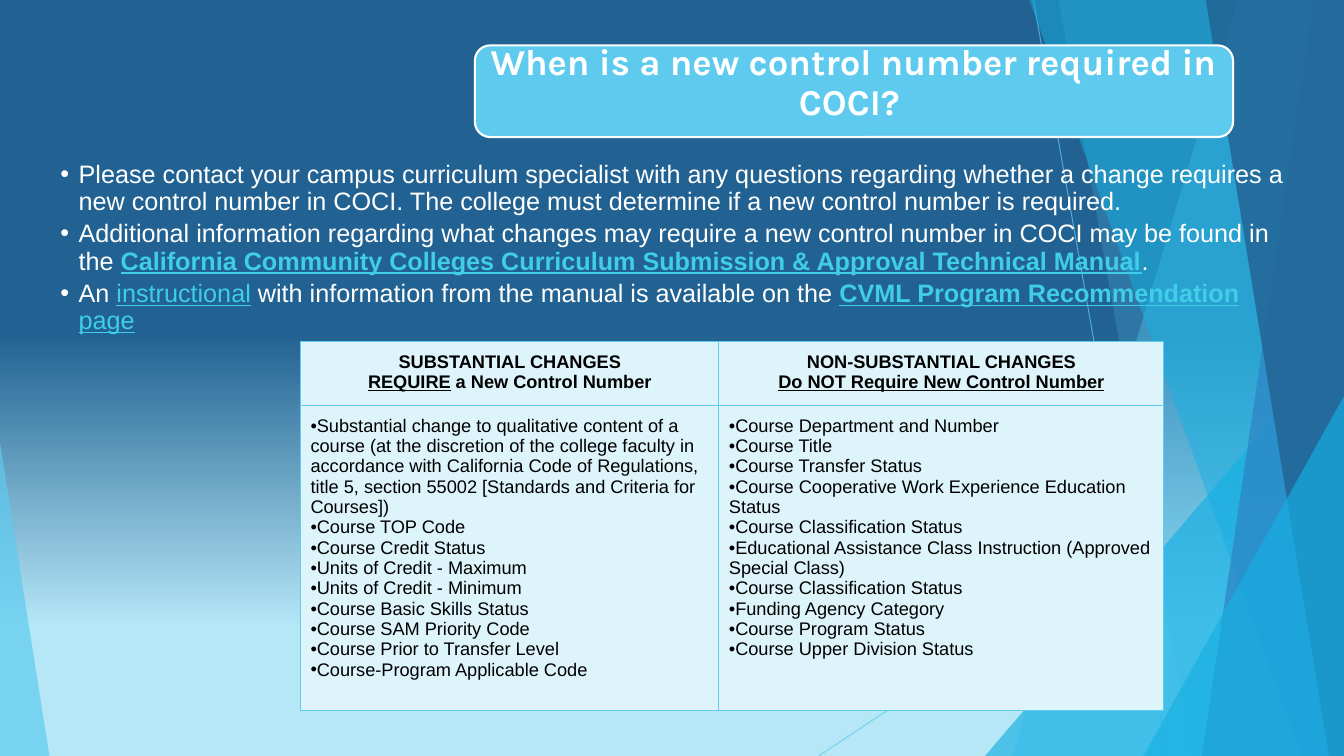
import pptx
import pptx.dml.color
import pptx.enum.shapes
import pptx.enum.text
import pptx.oxml
import pptx.oxml.ns
import pptx.util
from lxml import etree

Inches = pptx.util.Inches
Pt = pptx.util.Pt
qn = pptx.oxml.ns.qn
SHAPE = pptx.enum.shapes.MSO_SHAPE
ALIGN = pptx.enum.text.PP_ALIGN
ANCHOR = pptx.enum.text.MSO_ANCHOR

COLORS = {
    "navy": "226292", "pale": "B5E7F7", "sky": "5FCBEF", "azure": "16B0E3",
    "blue": "2E83C3", "title": "5ECBEE", "white": "FFFFFF", "black": "000000",
    "link": "3FCDE7", "cell": "DEF4FB",
}
LINK = {"color": "link", "underline": True}
BOLD_LINK = {**LINK, "bold": True}

NOTES = [
    [("Please contact your campus curriculum specialist with any questions regarding whether a change "
      "requires a new control number in COCI. The college must determine if a new control number is required.", {})],
    [("Additional information regarding what changes may require a new control number in COCI "
      "may be found in the ", {}),
     ("California Community Colleges Curriculum Submission & Approval Technical Manual", BOLD_LINK), (".", {})],
    [("An ", {}), ("instructional", LINK),
     (" with information from the manual is available on the ", {}),
     ("CVML Program Recommendation ", BOLD_LINK), ("page", LINK)],
]
HEADERS = [
    [[("SUBSTANTIAL CHANGES", {})],
     [("REQUIRE", {"underline": True}), (" a New Control Number", {})]],
    [[("NON-SUBSTANTIAL CHANGES", {})],
     [("Do NOT Require New Control Number", {"underline": True})]],
]
CHANGES = [
    ["Substantial change to qualitative content of a course (at the discretion of the college faculty in "
     "accordance with California Code of Regulations, title 5, section 55002 "
     "[Standards and Criteria for Courses])",
     "Course TOP Code", "Course Credit Status", "Units of Credit - Maximum", "Units of Credit - Minimum",
     "Course Basic Skills Status", "Course SAM Priority Code", "Course Prior to Transfer Level",
     "Course-Program Applicable Code"],
    ["Course Department and Number", "Course Title", "Course Transfer Status",
     "Course Cooperative Work Experience Education Status", "Course Classification Status",
     "Educational Assistance Class Instruction (Approved Special Class)", "Course Classification Status",
     "Funding Agency Category", "Course Program Status", "Course Upper Division Status"],
]


def rgb(name):
    return pptx.dml.color.RGBColor.from_string(COLORS[name])


def set_alpha(element, percent):
    for clr in element.iter(qn("a:srgbClr")):
        etree.SubElement(clr, qn("a:alpha"), val=str(percent * 1000))


def set_bullet(p, color, margin, indent):
    pPr = p._p.get_or_add_pPr()
    pPr.set("marL", str(Inches(margin)))
    pPr.set("indent", str(Inches(indent)))
    clr = etree.SubElement(pPr, qn("a:buClr"))
    etree.SubElement(clr, qn("a:srgbClr"), val=COLORS[color])
    etree.SubElement(pPr, qn("a:buFont"), typeface="Arial")
    etree.SubElement(pPr, qn("a:buChar"), char="•")


def write(tf, paragraphs, size, color, font="Arial", bold=False, align=ALIGN.LEFT,
          spacing=None, before=None, bullet=None):
    for i, pieces in enumerate(paragraphs):
        p = tf.add_paragraph() if i else tf.paragraphs[0]
        p.alignment = align
        p.line_spacing = spacing
        if before is not None:
            p.space_before = Pt(before)
        if bullet:
            set_bullet(p, color, *bullet)
        for text, fmt in pieces:
            r = p.add_run()
            r.text = text
            r.font.name = font
            r.font.size = Pt(size)
            r.font.bold = fmt.get("bold", bold)
            r.font.underline = fmt.get("underline", False)
            r.font.color.rgb = rgb(fmt.get("color", color))


def add_textbox(s, x, y, w, h, insets, anchor):
    tf = s.shapes.add_textbox(Inches(x), Inches(y), Inches(w), Inches(h)).text_frame
    tf.word_wrap = True
    tf.vertical_anchor = anchor
    tf.margin_left, tf.margin_top, tf.margin_right, tf.margin_bottom = map(Inches, insets)
    return tf


def paint(sp, color, alpha):
    sp.shadow.inherit = False
    sp.fill.solid()
    sp.fill.fore_color.rgb = rgb(color)
    sp.line.fill.background()
    set_alpha(sp._element.spPr, alpha)


def add_ray(s, x1, y1, x2, y2):
    line = s.shapes.add_connector(pptx.enum.shapes.MSO_CONNECTOR.STRAIGHT,
                                  Inches(x1), Inches(y1), Inches(x2), Inches(y2))
    line.line.color.rgb = rgb("sky")
    line.line.width = Pt(0.75)
    spPr = line._element.spPr
    set_alpha(spPr, 70)
    etree.SubElement(spPr, qn("a:effectLst"))


def add_band(s, right, bottom, top_x, bottom_x, color, alpha):
    points = [(right, 0), (right, bottom), (bottom_x, bottom)]
    builder = s.shapes.build_freeform(Inches(top_x), 0)
    builder.add_line_segments([(Inches(x), Inches(y)) for x, y in points], close=True)
    paint(builder.convert_to_shape(), color, alpha)


def add_triangle(s, left, top, right, bottom, apex, color, alpha):
    sp = s.shapes.add_shape(SHAPE.ISOSCELES_TRIANGLE, Inches(left), Inches(top),
                            Inches(right - left), Inches(bottom - top))
    sp.adjustments[0] = apex
    paint(sp, color, alpha)


def draw_backdrop(s, w, h):
    fill = s.background.fill
    fill.gradient()
    fill.gradient_angle = 270
    for stop, position, color in zip(fill.gradient_stops, (0.44, 0.83), ("navy", "pale")):
        stop.position = position
        stop.color.rgb = rgb(color)
    add_ray(s, 10.25, 0, 11.58, h)
    add_ray(s, w, 4.03, 8.12, h)
    add_band(s, w, h, 12.28, 10.04, "sky", 36)
    add_band(s, w, h, 10.5, 11.83, "sky", 20)
    add_triangle(s, 9.77, 3.33, w, h, 1, "azure", 66)
    add_band(s, w, h, 10.21, 12.91, "azure", 50)
    add_band(s, w, h, 13.03, 11.92, "blue", 70)
    add_band(s, w, h, 11.96, 13.18, "navy", 80)
    add_triangle(s, 11.34, 3.93, w, h, 1, "azure", 66)
    add_triangle(s, 0, 4.39, 0.49, h, 0, "sky", 70)


def draw_title(s, x, y, w, h):
    sp = s.shapes.add_shape(SHAPE.ROUNDED_RECTANGLE, Inches(x), Inches(y), Inches(w), Inches(h))
    sp.shadow.inherit = False
    sp.fill.solid()
    sp.fill.fore_color.rgb = rgb("title")
    sp.line.color.rgb = rgb("white")
    sp.line.width = Pt(1.5)
    tf = add_textbox(s, x - 0.4, y - 0.19, w + 0.8, h + 0.23, [0.12] * 4, ANCHOR.MIDDLE)
    write(tf, [[("When is a new control number required in COCI? ", {})]], 26, "white",
          font="Karla", bold=True, align=ALIGN.CENTER, spacing=0.9)


def draw_notes(s, x, y, w, h):
    tf = add_textbox(s, x, y, w, h, (0.41, 0.03, 0.19, 0.03), ANCHOR.TOP)
    write(tf, NOTES, 18, "white", spacing=0.9, before=3.8, bullet=(0.19, -0.18))


def style_cell(cell):
    cell.fill.solid()
    cell.fill.fore_color.rgb = rgb("cell")
    cell.margin_left = cell.margin_right = cell.margin_top = cell.margin_bottom = Inches(0.1)
    tcPr = cell._tc.get_or_add_tcPr()
    for i, side in enumerate(("lnL", "lnR", "lnT", "lnB")):
        ln = etree.Element(qn("a:" + side), w=str(Pt(0.75)))
        solid = etree.SubElement(ln, qn("a:solidFill"))
        etree.SubElement(solid, qn("a:srgbClr"), val=COLORS["sky"])
        tcPr.insert(i, ln)


def draw_changes(s, x, y, widths, heights):
    table = s.shapes.add_table(2, 2, Inches(x), Inches(y),
                               Inches(sum(widths)), Inches(sum(heights))).table
    table.first_row = table.horz_banding = False
    for row, height in zip(table.rows, heights):
        row.height = Inches(height)
    for i, width in enumerate(widths):
        table.columns[i].width = Inches(width)
        head, body = table.cell(0, i), table.cell(1, i)
        style_cell(head)
        style_cell(body)
        write(head.text_frame, HEADERS[i], 13, "black", bold=True, align=ALIGN.CENTER)
        write(body.text_frame, [[(item, {})] for item in CHANGES[i]], 13, "black", bullet=(0, -0.09))


def main():
    prs = pptx.Presentation()
    prs.slide_width, prs.slide_height = Inches(13.33), Inches(7.5)
    s = prs.slides.add_slide(prs.slide_layouts[6])
    draw_backdrop(s, 13.33, 7.5)
    draw_title(s, 4.71, 0.45, 7.52, 0.91)
    draw_notes(s, 0.18, 1.57, 12.78, 1.9)
    draw_changes(s, 2.98, 3.39, (4.15, 4.41), (0.6, 2.81))
    prs.save("out.pptx")


if __name__ == "__main__":
    main()
